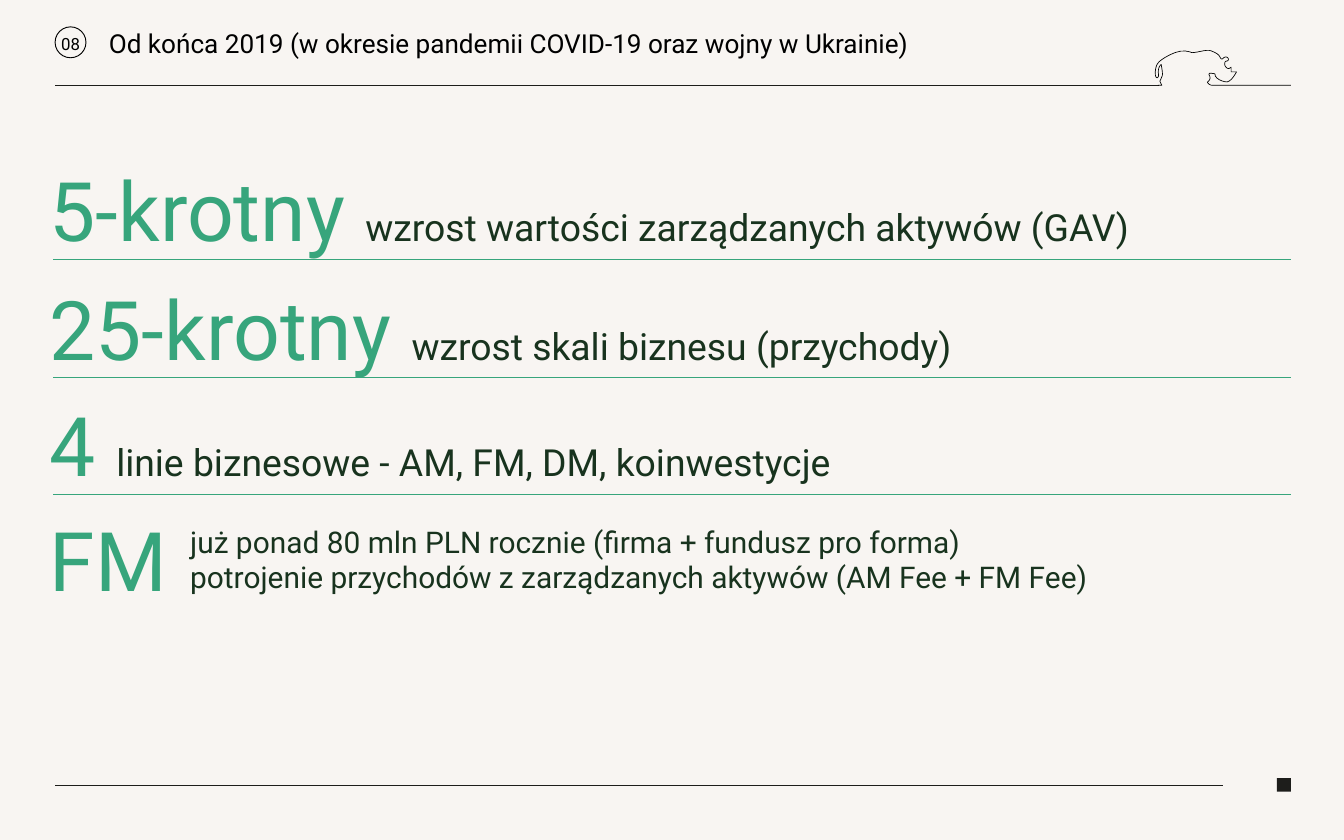
import pptx
import pptx.util
import pptx.dml.color
import pptx.enum.shapes
import pptx.enum.text
import pptx.oxml.ns
import lxml.etree

WIDTH = pptx.util.Inches(20)
HEIGHT = pptx.util.Inches(12.5)
COLUMN = WIDTH / 20
ROW = HEIGHT / 12.5

PAPER = pptx.dml.color.RGBColor(0xF8, 0xF5, 0xF2)
BLACK = pptx.dml.color.RGBColor(0, 0, 0)
INK = pptx.dml.color.RGBColor(0x1D, 0x1D, 0x1B)
GREEN = pptx.dml.color.RGBColor(0x37, 0xA5, 0x7C)
FOREST = pptx.dml.color.RGBColor(0x18, 0x33, 0x1E)

FONT = "Roboto"
LEFT = 0.74
RULE_LEFT, RULE_RIGHT = 0.79, 19.21
FRAME_LEFT = 0.82
FIRST_RULE, RULE_STEP = 3.86, 1.75
CLAIM_HEIGHT = 1.48

CLAIMS = [
    (2.36, "5-krotny ", "wzrost wartości zarządzanych aktywów (GAV)"),
    (4.14, "25-krotny ", "wzrost skali biznesu (przychody)"),
    (5.86, "4 ", "linie biznesowe - AM, FM, DM, koinwestycje"),
]
FEES = [
    "już ponad 80 mln PLN rocznie (firma + fundusz pro forma)",
    "potrojenie przychodów z zarządzanych aktywów (AM Fee + FM Fee)",
]

RHINO_START = (17.23, 1.27)
RHINO = [
    [(17.29, 1.27)],
    [(17.26, 1.21)],
    [(17.26, 1.21), (17.27, 1.19), (17.29, 1.14)],
    [(17.31, 1.12), (17.29, 1.02), (17.28, 0.96)],
    [(17.22, 1), (17.24, 1.11), (17.24, 1.11)],
    [(17.25, 1.16), (17.19, 1.2), (17.19, 1.08)],
    [(17.2, 0.96), (17.23, 0.94), (17.26, 0.91)],
    [(17.29, 0.88), (17.5, 0.74), (17.64, 0.76)],
    [(17.78, 0.78), (17.69, 0.79), (17.78, 0.78)],
    [(17.87, 0.77), (17.97, 0.73), (18.03, 0.76)],
    [(18.1, 0.79), (18.14, 0.81), (18.16, 0.86)],
    [(18.18, 0.89), (18.19, 0.88), (18.21, 0.86)],
    [(18.22, 0.85), (18.25, 0.84), (18.27, 0.86)],
    [(18.29, 0.88), (18.28, 0.91), (18.25, 0.91)],
    [(18.22, 0.91), (18.22, 0.96), (18.23, 0.98)],
    [(18.24, 1), (18.26, 1.02), (18.28, 1.02)],
    [(18.3, 1.02), (18.32, 1), (18.32, 1)],
    [(18.32, 1.07)],
    [(18.4, 1.07)],
    [(18.4, 1.07), (18.33, 1.21), (18.26, 1.22)],
    [(18.2, 1.22), (18.07, 1.17), (18.08, 1.1)],
    [(18.04, 1.09), (18, 1.09), (18, 1.09)],
    [(18, 1.09), (17.98, 1.1), (18, 1.13)],
    [(18.02, 1.17), (17.99, 1.21), (17.97, 1.22)],
    [(17.96, 1.22), (17.99, 1.27), (18.04, 1.27)],
    [(19.21, 1.27)],
]


def columns(count):
    return pptx.util.Emu(round(count * COLUMN))


def rows(count):
    return pptx.util.Emu(round(count * ROW))


def place(left, top, width, height):
    return columns(left), rows(top), columns(width), rows(height)


def add_rule(page, left, right, top, color, weight):
    rule = page.shapes.add_connector(
        pptx.enum.shapes.MSO_CONNECTOR.STRAIGHT,
        columns(left), rows(top), columns(right), rows(top))
    rule.line.color.rgb = color
    rule.line.width = pptx.util.Pt(weight)
    properties = rule._element.spPr
    lxml.etree.SubElement(properties, pptx.oxml.ns.qn("a:effectLst"))


def outline(shape, weight):
    shape.shadow.inherit = False
    shape.fill.background()
    shape.line.color.rgb = BLACK
    shape.line.width = pptx.util.Pt(weight)


def add_text(page, area, paragraphs, centred=False, spacing=None):
    box = page.shapes.add_textbox(*place(*area))
    frame = box.text_frame
    frame.word_wrap = True
    frame.vertical_anchor = pptx.enum.text.MSO_ANCHOR.MIDDLE
    frame.margin_left = frame.margin_right = 0
    frame.margin_top = frame.margin_bottom = 0
    for index, spans in enumerate(paragraphs):
        para = frame.add_paragraph() if index else frame.paragraphs[0]
        if centred:
            para.alignment = pptx.enum.text.PP_ALIGN.CENTER
        if spacing:
            para.line_spacing = spacing
        for text, size, color in spans:
            span = para.add_run()
            span.text = text
            span.font.name = FONT
            span.font.size = pptx.util.Pt(size)
            span.font.color.rgb = color


def curve_points(start, controls, steps=6):
    if len(controls) == 1:
        return controls
    points = []
    for step in range(1, steps + 1):
        t = step / steps
        weights = ((1 - t) ** 3, 3 * t * (1 - t) ** 2,
                   3 * t ** 2 * (1 - t), t ** 3)
        points.append(tuple(
            sum(weight * value for weight, value in zip(weights, axis))
            for axis in zip(start, *controls)))
    return points


def add_rhino(page):
    points = [RHINO_START]
    for controls in RHINO:
        points += curve_points(points[-1], controls)
    corners = [(columns(x), rows(y)) for x, y in points]
    builder = page.shapes.build_freeform(*corners[0])
    builder.add_line_segments(corners[1:], close=False)
    outline(builder.convert_to_shape(), 0.75)


def add_frame(page):
    add_rule(page, FRAME_LEFT, 17.24, 1.27, INK, 0.75)
    add_rule(page, FRAME_LEFT, 18.2, 11.68, INK, 0.75)
    add_rhino(page)
    mark = page.shapes.add_shape(
        pptx.enum.shapes.MSO_SHAPE.RECTANGLE, *place(19, 11.58, 0.21, 0.2))
    mark.shadow.inherit = False
    mark.fill.solid()
    mark.fill.fore_color.rgb = INK
    mark.line.fill.background()


def add_header(page):
    ring = page.shapes.add_shape(
        pptx.enum.shapes.MSO_SHAPE.OVAL, *place(FRAME_LEFT, 0.4, 0.46, 0.46))
    outline(ring, 1)
    add_text(page, (FRAME_LEFT, 0.43, 0.46, 0.45),
             [[("08", 18, BLACK)]], centred=True)
    title = "Od końca 2019 (w okresie pandemii COVID-19 oraz wojny w Ukrainie)"
    add_text(page, (1.62, 0.06, 15.05, 1.21),
             [[(title, 28, BLACK)]], spacing=0.9)


def add_claims(page):
    for index, (top, figure, label) in enumerate(CLAIMS):
        add_rule(page, RULE_LEFT, RULE_RIGHT,
                 FIRST_RULE + index * RULE_STEP, GREEN, 0.5)
        add_text(page, (LEFT, top, 18.21, CLAIM_HEIGHT),
                 [[(figure, 88, GREEN), (label, 40, FOREST)]])
    add_text(page, (LEFT, 7.58, 2.09, CLAIM_HEIGHT), [[("FM", 88, GREEN)]])
    add_text(page, (2.83, 7.78, 15.79, 1.08),
             [[(text, 32, FOREST)] for text in FEES])


def main():
    deck = pptx.Presentation()
    deck.slide_width, deck.slide_height = WIDTH, HEIGHT
    page = deck.slides.add_slide(deck.slide_layouts[6])
    page.background.fill.solid()
    page.background.fill.fore_color.rgb = PAPER
    add_frame(page)
    add_header(page)
    add_claims(page)
    deck.save("out.pptx")


if __name__ == "__main__":
    main()
